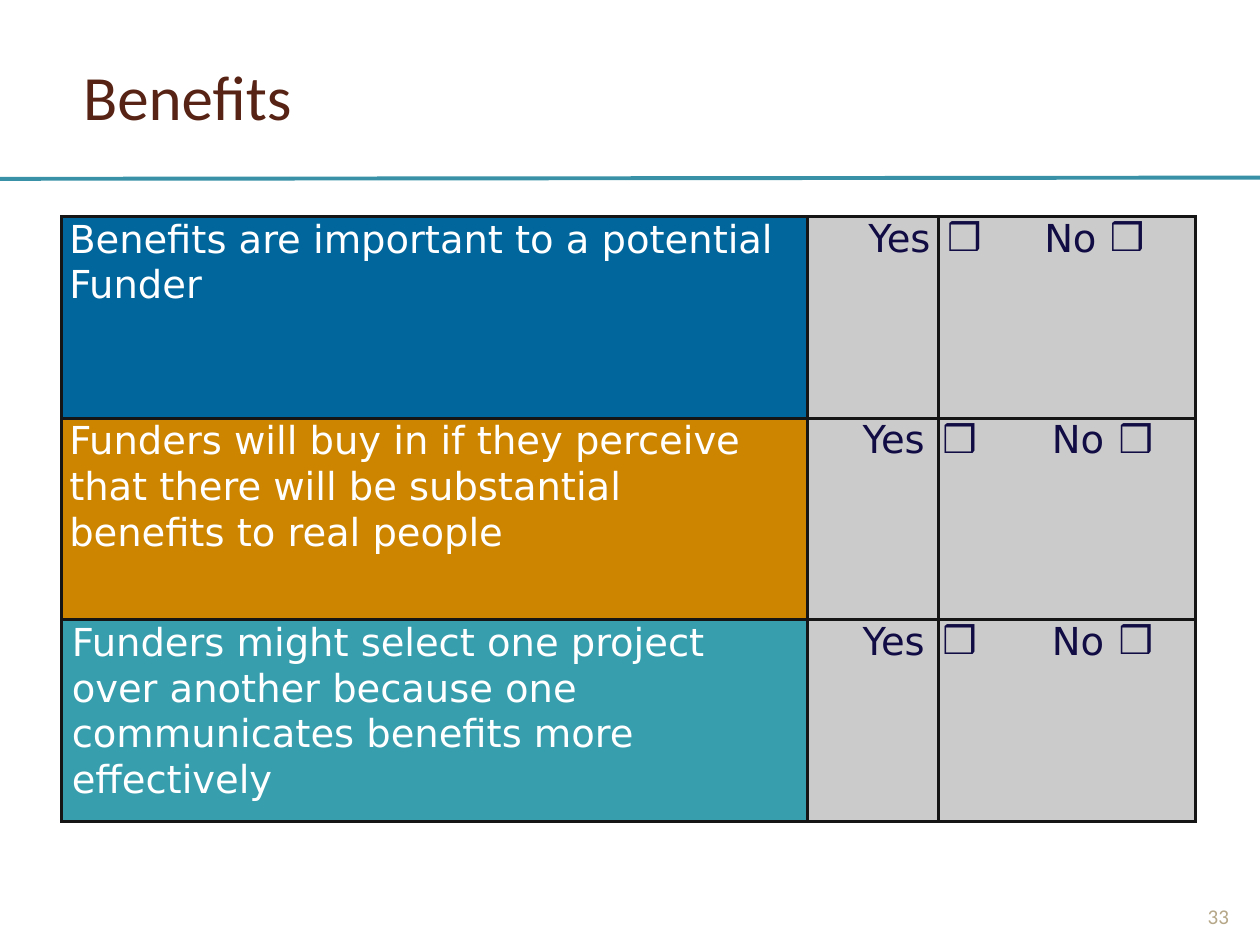
"""Build the Benefits slide with its yes/no checklist table."""
from dataclasses import dataclass
from typing import Any

import pptx
import pptx.dml.color
import pptx.enum.shapes
import pptx.enum.text
import pptx.oxml
import pptx.oxml.ns
import pptx.util

Pt = pptx.util.Pt
Align = pptx.enum.text.PP_ALIGN
Anchor = pptx.enum.text.MSO_ANCHOR


@dataclass(frozen=True)
class Theme:
    """Colours, fonts and type sizes of the slide."""
    title: str = "572314"
    rule: str = "3891A7"
    edge: str = "151515"
    plain: str = "CBCBCB"
    ink: str = "110C43"
    light: str = "FFFFFF"
    number: str = "B5A788"
    head: str = "Calibri"
    body: str = "DejaVu Sans"
    sign: str = "Arial"
    large: float = 36
    medium: float = 22
    small: float = 12


@dataclass(frozen=True)
class Claim:
    """One table row: statement, its fill and the indents of its cells."""
    text: str
    fill: str
    indents: tuple[float, ...]


THEME = Theme()
WIDTHS = (426, 75, 41, 55.5, 50.5)
HEIGHT = 115.2
ANSWERS = ("Yes", "❒", "No", "❒")
SIDES = ("L", "L", "L", "", "")
CLAIMS = (
    Claim("Benefits are important to a potential Funder", "00669C",
          (4.3, 35, 5, 19.5, 1.5)),
    Claim("Funders will buy in if they perceive that there will be "
          "substantial benefits to real people", "CD8500",
          (4.3, 31.7, 2.2, 23.8, 6.5)),
    Claim("Funders might select one project over another because one "
          "communicates benefits more effectively", "379EAE",
          (5.8, 31.7, 2.2, 23.8, 6.5)),
)


def apply(item: Any, **values: Any) -> None:
    """Set every given format value on an object."""
    for name, value in values.items():
        setattr(item, name, value)


def tint(code: str) -> pptx.dml.color.RGBColor:
    """Turn a hex code into a colour."""
    return pptx.dml.color.RGBColor.from_string(code)


def write(frame: Any, text: str, face: str, size: float, code: str,
          **layout: Any) -> None:
    """Fill a text frame with one formatted paragraph."""
    frame.text = text
    line = frame.paragraphs[0]
    apply(line, **layout)
    font = line.runs[0].font
    apply(font, name=face, size=Pt(size))
    font.color.rgb = tint(code)


def border(cell: Any, drawn: str) -> None:
    """Draw the named cell edges and clear the others."""
    props = cell._tc.get_or_add_tcPr()
    space = pptx.oxml.ns.nsdecls("a")
    for side in "LRTB":
        paint = (f'<a:solidFill><a:srgbClr val="{THEME.edge}"/></a:solidFill>'
                 if side in drawn else "<a:noFill/>")
        props.append(pptx.oxml.parse_xml(
            f'<a:ln{side} {space} w="{Pt(2)}">{paint}</a:ln{side}>'))


def shade(cell: Any, code: str) -> None:
    """Give a cell a solid fill."""
    cell.fill.solid()
    cell.fill.fore_color.rgb = tint(code)


def add_rule(slide: Any) -> None:
    """Draw the line under the title."""
    rule = slide.shapes.add_connector(
        pptx.enum.shapes.MSO_CONNECTOR.STRAIGHT,
        Pt(0), Pt(102.2), Pt(720), Pt(101.5))
    rule.line.width = Pt(2.25)
    rule.line.color.rgb = tint(THEME.rule)
    rule._element.spPr.append(pptx.oxml.parse_xml(
        f'<a:effectLst {pptx.oxml.ns.nsdecls("a")}/>'))


def add_claims(slide: Any) -> None:
    """Draw the table of claims and answers."""
    table = slide.shapes.add_table(
        len(CLAIMS), len(WIDTHS), Pt(35.3), Pt(123.8),
        Pt(sum(WIDTHS)), Pt(HEIGHT * len(CLAIMS))).table
    apply(table, first_row=False, horz_banding=False)
    for column, width in zip(table.columns, WIDTHS):
        column.width = Pt(width)
    for row, claim in zip(table.rows, CLAIMS):
        row.height = Pt(HEIGHT)
        texts = (claim.text, *ANSWERS)
        for spot, (cell, text) in enumerate(zip(row.cells, texts)):
            first = spot == 0
            after = SIDES[spot + 1] if spot + 1 < len(SIDES) else "L"
            border(cell, "TB" + SIDES[spot] + ("R" if after else ""))
            shade(cell, claim.fill if first else THEME.plain)
            apply(cell, margin_left=Pt(claim.indents[spot]),
                  margin_right=Pt(16 if first else 0),
                  margin_top=0, margin_bottom=0)
            write(cell.text_frame, text,
                  THEME.sign if text == "❒" else THEME.body, THEME.medium,
                  THEME.light if first else THEME.ink,
                  line_spacing=1.02 if first else 1.0)


def add_title(slide: Any) -> None:
    """Place and format the title."""
    title = slide.shapes.title
    apply(title, left=Pt(40.3), top=Pt(9.4), width=Pt(633), height=Pt(90))
    apply(title.text_frame, vertical_anchor=Anchor.MIDDLE,
          auto_size=pptx.enum.text.MSO_AUTO_SIZE.NONE)
    write(title.text_frame, "Benefits", THEME.head, THEME.large,
          THEME.title, alignment=Align.LEFT)


def add_number(slide: Any) -> None:
    """Write the page number."""
    frame = slide.shapes.add_textbox(
        Pt(678.2), Pt(496.8), Pt(36), Pt(37.4)).text_frame
    apply(frame, word_wrap=True, vertical_anchor=Anchor.BOTTOM)
    write(frame, "33", THEME.head, THEME.small, THEME.number,
          alignment=Align.CENTER)


def main() -> None:
    """Build and save the slide."""
    deck = pptx.Presentation()
    apply(deck, slide_width=Pt(720), slide_height=Pt(540))
    slide = deck.slides.add_slide(deck.slide_layouts.get_by_name("Title Only"))
    for draw in (add_rule, add_claims, add_title, add_number):
        draw(slide)
    deck.save("out.pptx")


if __name__ == "__main__":
    main()
